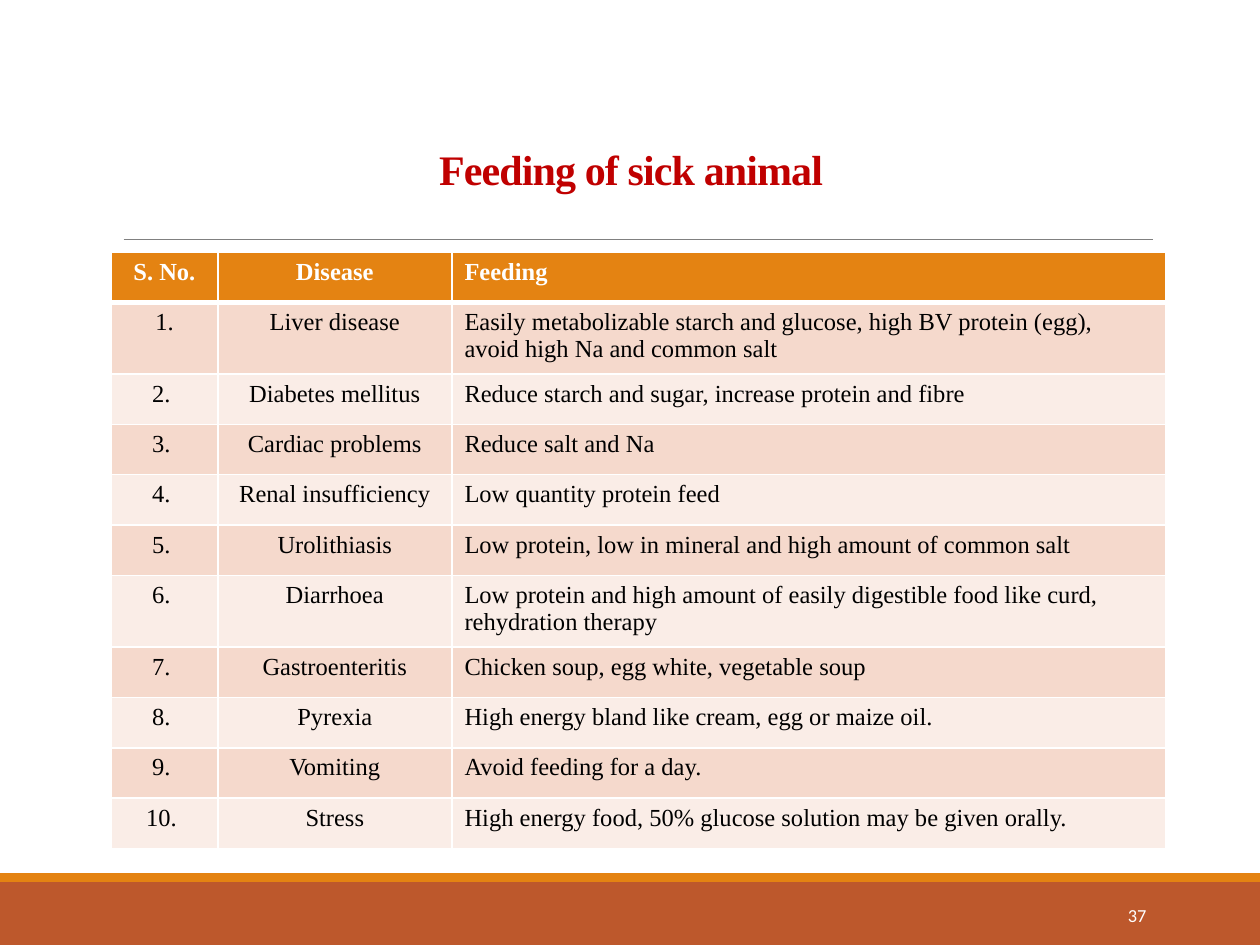
from dataclasses import dataclass

from lxml import etree
from pptx import Presentation
from pptx.dml.color import RGBColor
from pptx.enum import shapes as sh, text as tx
from pptx.oxml import ns
from pptx.util import Cm, Pt


@dataclass(frozen=True)
class Theme:
    rust: str = "BD582C"
    gold: str = "E48312"
    rule: str = "808080"
    title: str = "C00000"
    white: str = "FFFFFF"
    ink: str = "000000"
    bands: tuple = ("F5D9CC", "FAEDE7")
    serif: str = "Times New Roman"
    sans: str = "Calibri"
    head: float = 24
    body: float = 14
    small: float = 10.5


LOOK = Theme()
MID, LEFT, RIGHT = tx.PP_ALIGN.CENTER, tx.PP_ALIGN.LEFT, tx.PP_ALIGN.RIGHT
HEADS = ("S. No.", "Disease", "Feeding")
FEEDS = (
    ("Liver disease", "Easily metabolizable starch and glucose, high BV protein (egg), avoid high Na and common salt"),
    ("Diabetes mellitus", "Reduce starch and sugar, increase protein and fibre"),
    ("Cardiac problems", "Reduce salt and Na"),
    ("Renal insufficiency", "Low quantity protein feed"),
    ("Urolithiasis", "Low protein, low in mineral and high amount of common salt"),
    ("Diarrhoea", "Low protein and high amount of easily digestible food like curd, rehydration therapy"),
    ("Gastroenteritis", "Chicken soup, egg white, vegetable soup"),
    ("Pyrexia", "High energy bland like cream, egg or maize oil."),
    ("Vomiting", "Avoid feeding for a day."),
    ("Stress", "High energy food, 50% glucose solution may be given orally."),
)


def tint(hue):
    return RGBColor.from_string(hue)


def write(frame, words, size, hue, face, align, bold=False):
    para = frame.paragraphs[0]
    para.text = words
    para.alignment = align
    font = para.font
    font.size, font.name, font.bold = Pt(size), face, bold
    font.color.rgb = tint(hue)
    return para


def add_bar(slide, top, high, hue):
    bar = slide.shapes.add_shape(sh.MSO_SHAPE.RECTANGLE, 0, Cm(top), Cm(25.4), Cm(high))
    bar.shadow.inherit = False
    bar.fill.solid()
    bar.fill.fore_color.rgb = tint(hue)
    bar.line.fill.background()


def add_rule(slide, left, right, top):
    rule = slide.shapes.add_connector(
        sh.MSO_CONNECTOR.STRAIGHT, Cm(left), Cm(top), Cm(right), Cm(top))
    rule.line.color.rgb = tint(LOOK.rule)
    rule.line.width = Pt(0.5)
    etree.SubElement(rule.element.spPr, ns.qn("a:effectLst"))


def set_title(slide, words):
    title = slide.shapes.title
    title.left, title.top, title.width, title.height = Cm(2.24), Cm(2.69), Cm(20.96), Cm(1.35)
    frame = title.text_frame
    frame.auto_size = tx.MSO_AUTO_SIZE.NONE
    frame.vertical_anchor = tx.MSO_ANCHOR.BOTTOM
    para = write(frame, words, LOOK.head, LOOK.title, LOOK.serif, MID, True)
    para.line_spacing = 0.85
    para.runs[0].font._element.set("spc", "-50")


def add_page(slide, words):
    box = slide.shapes.add_textbox(Cm(20.62), Cm(17.93), Cm(2.74), Cm(1.02))
    frame = box.text_frame
    frame.word_wrap = True
    frame.vertical_anchor = tx.MSO_ANCHOR.MIDDLE
    write(frame, words, LOOK.small, LOOK.white, LOOK.sans, RIGHT)


def edge(cell, base):
    props = cell._tc.get_or_add_tcPr()
    for spot, (side, width) in enumerate((("L", 1), ("R", 1), ("T", 1), ("B", base))):
        line = etree.Element(ns.qn("a:ln" + side), w=str(Pt(width)))
        fill = etree.SubElement(line, ns.qn("a:solidFill"))
        etree.SubElement(fill, ns.qn("a:srgbClr"), val=LOOK.white)
        props.insert(spot, line)


def add_grid(slide):
    rows = [HEADS]
    for num, feed in enumerate(FEEDS, 1):
        rows.append((f"{num}." if num == 1 else f"{num}. ", *feed))
    wide = (2.15, 4.72, 14.4)
    grid = slide.shapes.add_table(
        len(rows), len(wide), Cm(2.24), Cm(5.08), Cm(sum(wide)), Cm(1.016 * len(rows))).table
    for col, width in zip(grid.columns, wide):
        col.width = Cm(width)
    for r, row in enumerate(rows):
        top = r == 0
        for c, words in enumerate(row):
            cell = grid.cell(r, c)
            cell.fill.solid()
            cell.fill.fore_color.rgb = tint(LOOK.gold if top else LOOK.bands[(r - 1) % 2])
            write(cell.text_frame, words, LOOK.body, LOOK.white if top else LOOK.ink,
                  LOOK.serif, LEFT if c == 2 else MID, top)
            edge(cell, 3 if top else 1)


def main():
    deck = Presentation()
    deck.slide_width, deck.slide_height = Cm(25.4), Cm(19.05)
    slide = deck.slides.add_slide(deck.slide_layouts[5])
    add_bar(slide, 17.78, 1.27, LOOK.rust)
    add_bar(slide, 17.6, 0.18, LOOK.gold)
    add_rule(slide, 2.49, 23.24, 4.83)
    set_title(slide, "Feeding of sick animal")
    add_page(slide, "37")
    add_grid(slide)
    deck.save("out.pptx")


if __name__ == "__main__":
    main()
